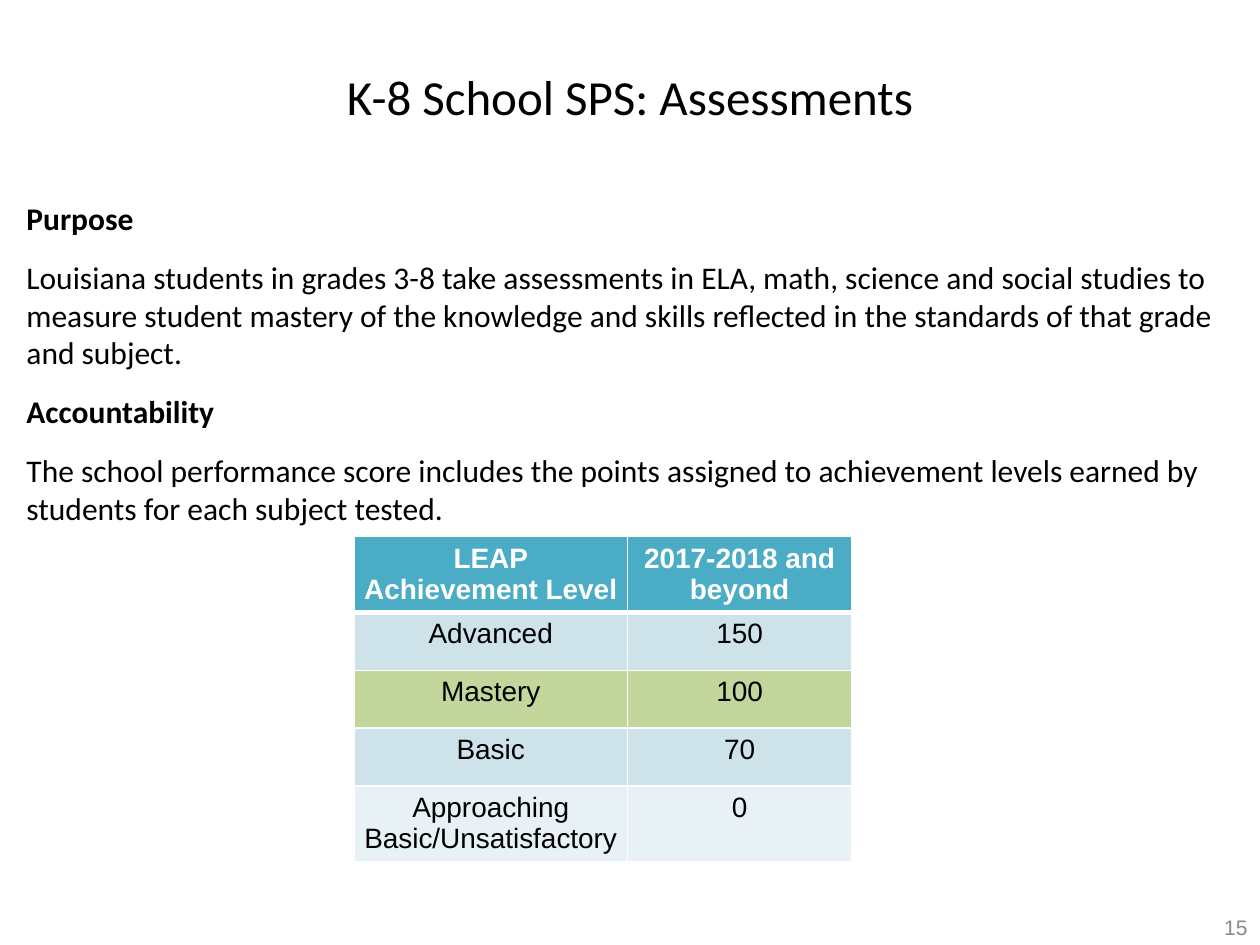
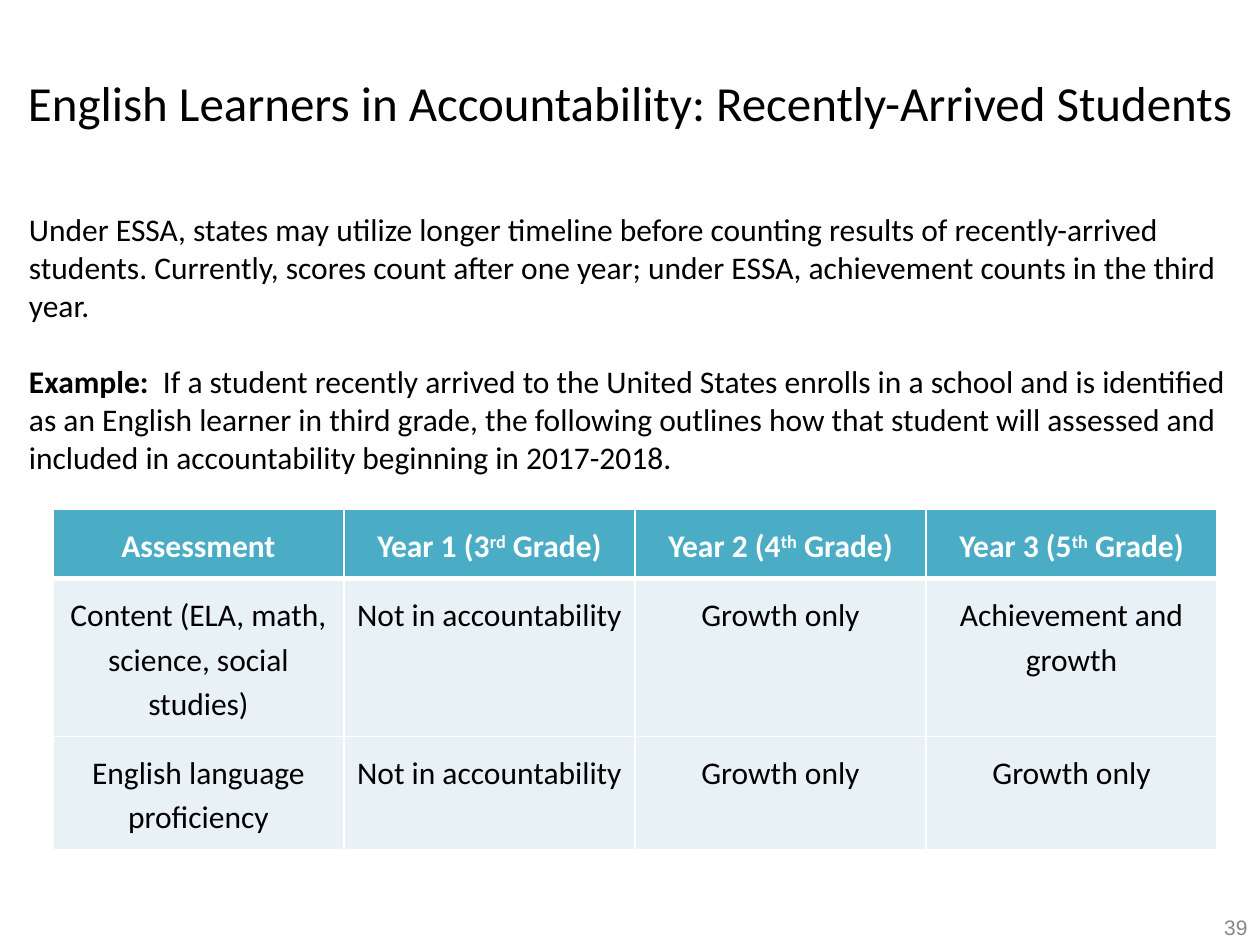
from pptx import Presentation
from pptx.dml.color import RGBColor
from pptx.enum.text import MSO_ANCHOR, MSO_AUTO_SIZE, PP_ALIGN
from pptx.oxml.ns import qn
from pptx.util import Inches, Pt
from lxml import etree

CENTER, RIGHT, LEFT = PP_ALIGN.CENTER, PP_ALIGN.RIGHT, PP_ALIGN.LEFT
MIDDLE, TOP = MSO_ANCHOR.MIDDLE, MSO_ANCHOR.TOP
NO_FIT = MSO_AUTO_SIZE.NONE

# Shared look
BLACK, WHITE, GREY = "000000", "FFFFFF", "888888"
TEAL, BLUE, PALE, GREEN = "4BACC6", "CEE2EA", "E8F1F5", "C3D69B"
TITLE_FONT = {"name": "Calibri", "size": Pt(28), "bold": False}
BODY_FONT = {"name": "Calibri", "size": Pt(18), "bold": False}
NUMBER_FONT = {"name": "Arial", "size": Pt(12), "bold": False}
LEVEL_FONT = {"name": "Arial", "size": Pt(16), "bold": False}
BOLD = {"bold": True}


def rgb(hex_color):
    return RGBColor.from_string(hex_color)


def set_attrs(target, values):
    for name, value in values.items():
        setattr(target, name, value)


def place(shape, left, top, width, height):
    set_attrs(shape, {"left": Inches(left), "top": Inches(top),
                      "width": Inches(width), "height": Inches(height)})


def add_run(p, text, font, color, superscript=False):
    r = p.add_run()
    r.text = text
    set_attrs(r.font, font)
    r.font.color.rgb = rgb(color)
    if superscript:
        r._r.get_or_add_rPr().set("baseline", "30000")


def write(tf, paragraphs, font, color=BLACK, align=LEFT, gap=0, spacing=1.0):
    """Each paragraph is a string or a list of (text, run options)."""
    for i, runs in enumerate(paragraphs):
        p = tf.add_paragraph() if i else tf.paragraphs[0]
        set_attrs(p, {"alignment": align, "line_spacing": spacing,
                      "space_before": Pt(gap if i else 0)})
        for text, options in [(runs, {})] if isinstance(runs, str) else runs:
            raised = options.get("superscript", False)
            extra = {k: v for k, v in options.items() if k != "superscript"}
            add_run(p, text, {**font, **extra}, color, raised)


def set_frame(tf, anchor):
    set_attrs(tf, {"word_wrap": True, "auto_size": NO_FIT,
                   "vertical_anchor": anchor})


def add_base_slide(prs, title, title_height, number):
    s = prs.slides.add_slide(prs.slide_layouts[1])
    place(s.shapes.title, 0, 0, 10, title_height)
    set_frame(s.shapes.title.text_frame, MIDDLE)
    write(s.shapes.title.text_frame, [title], TITLE_FONT, align=CENTER)
    # Slide number in the bottom right corner
    box = s.shapes.add_textbox(Inches(7.67), Inches(7.17),
                               Inches(2.33), Inches(0.38))
    set_frame(box.text_frame, MIDDLE)
    write(box.text_frame, [number], NUMBER_FONT, GREY, RIGHT)
    return s


def fill_body(s, at, paragraphs, gap):
    body = s.placeholders[1]
    place(body, *at)
    tf = body.text_frame
    set_frame(tf, TOP)
    write(tf, paragraphs, BODY_FONT, gap=gap)
    for p in tf.paragraphs:
        pPr = p._p.get_or_add_pPr()
        pPr.set("marL", "0")
        pPr.set("indent", "0")
        etree.SubElement(pPr, qn("a:buNone"))


def set_borders(cell, widths):
    tcPr = cell._tc.get_or_add_tcPr()
    for side, width in widths.items():
        ln = etree.SubElement(tcPr, qn("a:ln" + side), w=str(Pt(width)))
        fill = etree.SubElement(ln, qn("a:solidFill"))
        etree.SubElement(fill, qn("a:srgbClr"), val=WHITE)


def add_grid(s, left, top, widths, heights, rows, fills, font, margins,
             spacing=1.0):
    frame = s.shapes.add_table(len(rows), len(widths), Inches(left),
                               Inches(top), Inches(sum(widths)),
                               Inches(sum(heights)))
    table = frame.table
    table.horz_banding = False
    for column, width in zip(table.columns, widths):
        column.width = Inches(width)
    side, edge = (Inches(m) for m in margins)
    for i, row in enumerate(rows):
        table.rows[i].height = Inches(heights[i])
        header = i == 0
        for j, paragraphs in enumerate(row):
            cell = table.cell(i, j)
            set_attrs(cell, {"margin_left": side, "margin_right": side,
                             "margin_top": edge, "margin_bottom": edge})
            # A thick rule separates the header from the rows below
            set_borders(cell, {"L": 1, "R": 1, "T": 3 if i == 1 else 1,
                               "B": 3 if header else 1})
            cell.fill.solid()
            cell.fill.fore_color.rgb = rgb(fills[i])
            if isinstance(paragraphs, str):
                paragraphs = [paragraphs]
            write(cell.text_frame, paragraphs, {**font, "bold": header},
                  WHITE if header else BLACK, CENTER, spacing=spacing)


def year_heading(year, grade, suffix):
    return [[(f"Year {year} ({grade}", {}), (suffix, {"superscript": True}),
             (" Grade)", {})]]


def add_assessments(prs):
    s = add_base_slide(prs, "K-8 School SPS: Assessments", 1.52, "15")
    fill_body(s, (0.11, 1.53, 9.96, 2.73), [
        [("Purpose", BOLD)],
        "Louisiana students in grades 3-8 take assessments in ELA, math, "
        "science and social studies to measure student mastery of the "
        "knowledge and skills reflected in the standards of that grade and "
        "subject.",
        [("Accountability", BOLD)],
        "The school performance score includes the points assigned to "
        "achievement levels earned by students for each subject tested.",
    ], gap=12)
    rows = [
        (["LEAP", "Achievement Level"], "2017-2018 and beyond"),
        ("Advanced", "150"),
        ("Mastery", "100"),
        ("Basic", "70"),
        ("Approaching Basic/Unsatisfactory", "0"),
    ]
    add_grid(s, 2.81, 4.26, [2.17, 1.78], [0.6, 0.46, 0.46, 0.46, 0.6], rows,
             [TEAL, BLUE, GREEN, BLUE, PALE], LEVEL_FONT, (0.05, 0.05))


def add_english_learners(prs):
    s = add_base_slide(prs, "English Learners in Accountability: "
                       "Recently-Arrived Students", 1.62, "39")
    fill_body(s, (0.13, 1.62, 9.87, 2.4), [
        "Under ESSA, states may utilize longer timeline before counting "
        "results of recently-arrived students. Currently, scores count after "
        "one year; under ESSA, achievement counts in the third year.",
        [("Example:  ", BOLD),
         ("If a student recently arrived to the United States enrolls in a "
          "school and is identified as an English learner in third grade, "
          "the following outlines how that student will assessed and "
          "included in accountability beginning in 2017-2018.", {})],
    ], gap=22)
    rows = [
        ("Assessment", year_heading(1, 3, "rd"), year_heading(2, 4, "th"),
         year_heading(3, 5, "th")),
        ("Content (ELA, math, science, social studies)",
         "Not in accountability", "Growth only", "Achievement and growth"),
        ("English language proficiency", "Not in accountability",
         "Growth only", "Growth only"),
    ]
    add_grid(s, 0.42, 4.04, [2.31] * 4, [0.55, 1.25, 0.9], rows,
             [TEAL, PALE, PALE], BODY_FONT, (0.07, 0.1), spacing=1.15)


def main():
    prs = Presentation()
    prs.slide_width, prs.slide_height = Inches(10), Inches(7.5)
    add_assessments(prs)
    add_english_learners(prs)
    prs.save("out.pptx")


if __name__ == "__main__":
    main()
